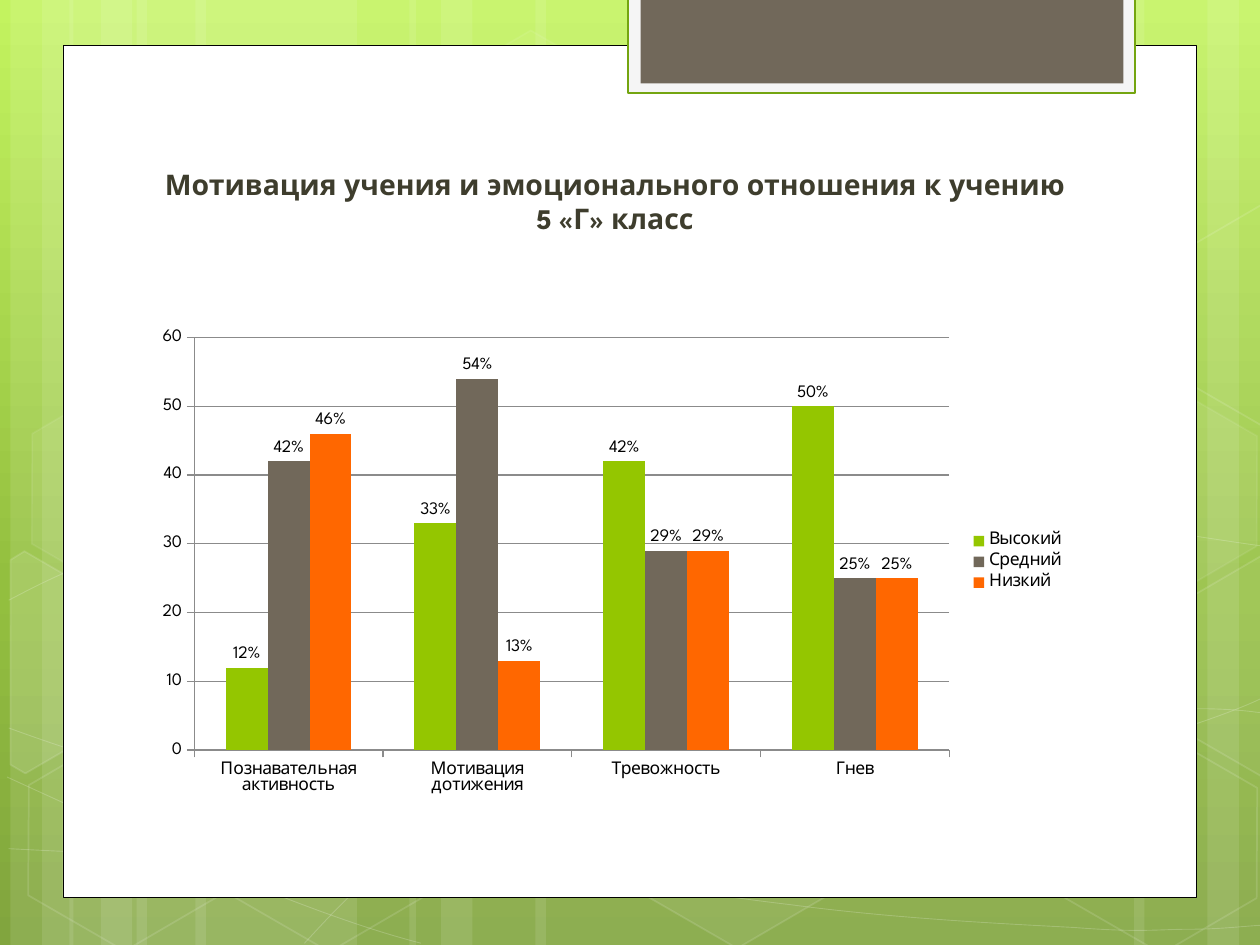
from copy import deepcopy
from math import cos, radians, sin

from lxml.etree import SubElement
from pptx import Presentation
from pptx.chart.data import CategoryChartData as ChartData
from pptx.dml.color import RGBColor
from pptx.enum.chart import XL_CHART_TYPE as CT, XL_LABEL_POSITION as LP
from pptx.enum.chart import XL_LEGEND_POSITION as LEGEND, XL_TICK_MARK as TICK
from pptx.enum.shapes import MSO_SHAPE as SHAPE
from pptx.enum.text import MSO_ANCHOR as ANCHOR, PP_ALIGN as ALIGN
from pptx.oxml.ns import qn
from pptx.util import Pt

WIDTH, HEIGHT = 720, 540
STRIPES = [(78, 126), (6, 36), (24, 60), (111.6, 126), (39.6, 36), (57.6, 60),
           (528, 126), (690, 36), (648, 60), (306, 222), (234, 36), (252, 60)]
CURVES = [
    [(5, 485), (44, 487, 83, 489, 137, 488), (191, 487.5, 258, 486, 330, 479),
     (402, 472, 504, 458, 570, 444), (636, 430.5, 703, 409, 725, 397)],
    [(5, 343), (26, 332, 47, 321, 87, 310), (128, 300, 186, 284, 250, 279),
     (314, 273.5, 392, 273, 471, 279), (550, 284, 682, 307, 725, 312.5)],
    [(4, 444), (91, 484, 178, 523, 240.5, 539)],
    [(5, 416), (27, 424, 50, 432, 92, 443.5), (134, 454, 197, 472, 257, 484.5),
     (317, 497, 392, 510, 452, 517), (512, 525, 576, 528, 614, 530),
     (652, 533, 662, 531, 680, 531), (699, 531, 712, 529, 725, 528.5)],
    [(174, 539), (187, 525, 200, 510.5, 217, 497.5), (235, 484.5, 259, 470, 279, 460),
     (299.5, 450, 312, 446, 338, 438.5), (364, 431, 413, 421, 438, 416),
     (464, 411, 467, 411, 490, 410), (512, 407.5, 547, 405, 572, 405),
     (597, 404, 638, 405, 638, 405), (686, 405),
     (699, 405, 711, 406, 718, 407), (724, 407.5, 722, 407, 724.5, 407.5)],
]
HEXAGONS = [(240.5, 26, 4, 8), (358, 424, 6, 12), (8, 425.5, 0, 12), (10, 224.6, 7, 8),
            (125, 426, 0, 12), (542, 326, 10, 12), (600.5, 427, 0, 12), (600.5, 226, 7, 8)]
LEFT_EDGE = [(6, 320), (14, 315), (69, 347), (68.5, 410.5), (14.5, 442), (6, 437)]
RIGHT_EDGE = [(667, 349), (721, 317.5), (726.5, 321), (726.5, 441), (721.5, 444), (667, 412.5)]
TILT = 30
CATEGORIES = ["Познавательная активность", "Мотивация дотижения", "Тревожность", "Гнев"]
SERIES = [("Высокий", (12, 33, 42, 50), "94C600"),
          ("Средний", (42, 54, 29, 25), "71685A"),
          ("Низкий", (46, 13, 29, 25), "FF6700")]


def rgb(color):
    return RGBColor.from_string(color)


def paint(fill, color=None, alpha=100):
    if not color or not alpha:
        fill.background()
        return
    fill.solid()
    fill.fore_color.rgb = rgb(color)
    if alpha < 100:
        clr = fill._xPr.find(".//" + qn("a:srgbClr"))
        SubElement(clr, qn("a:alpha")).set("val", str(alpha * 1000))


def write(tf, text, font, size, color, bold=False, align=ALIGN.LEFT):
    p = tf.paragraphs[0]
    p.alignment = align
    for i, line in enumerate(text.split("\n")):
        if i:
            p.add_line_break()
        r = p.add_run()
        r.text = line
        r.font.name, r.font.size, r.font.bold = font, Pt(size), bold
        r.font.color.rgb = rgb(color)


def rotate(x, y, degrees):
    c, s = cos(radians(degrees)), sin(radians(degrees))
    return x * c - y * s, x * s + y * c


def untilt(points):
    flat = [rotate(x, y, -TILT) for x, y in points]
    mx, my = ((min(axis) + max(axis)) / 2 for axis in zip(*flat))
    cx, cy = rotate(mx, my, TILT)
    return [(x + cx - mx, y + cy - my) for x, y in flat]


class Deck:
    font = "League Spartan"
    white, ink, title_ink, grey = "FFFFFF", "000000", "3E3D2D", "8B8B8B"

    def __init__(self):
        self.prs = Presentation()
        self.prs.slide_width, self.prs.slide_height = Pt(WIDTH), Pt(HEIGHT)
        self.s = self.prs.slides.add_slide(self.prs.slide_layouts[6])

    def background(self, stops):
        fill = self.s.background.fill
        fill.gradient()
        fill.gradient_angle = 270
        gs_list = next(self.s._element.iter(qn("a:gsLst")))
        gs_list.append(deepcopy(gs_list[-1]))
        for stop, (position, color) in zip(fill.gradient_stops, stops):
            stop.position, stop.color.rgb = position, rgb(color)

    def finish(self, sp, color, alpha, line, weight, line_alpha):
        sp.shadow.inherit = False
        paint(sp.fill, color, alpha)
        paint(sp.line.fill, line, line_alpha)
        if line:
            sp.line.width = Pt(weight)
        return sp

    def shape(self, kind, box, color=None, alpha=100, line=None, weight=1, line_alpha=100):
        sp = self.s.shapes.add_shape(kind, *map(Pt, box))
        return self.finish(sp, color, alpha, line, weight, line_alpha)

    def freeform(self, points, close):
        points = [(Pt(x), Pt(y)) for x, y in points]
        fb = self.s.shapes.build_freeform(*points[0])
        fb.add_line_segments(points[1:], close=close)
        return fb.convert_to_shape()

    def polygon(self, points, alpha=0):
        sp = self.freeform(untilt(points), True)
        sp.rotation = TILT
        self.finish(sp, self.white, alpha, self.white, 1, 12)

    def curve(self, segments):
        points = [seg[i:i + 2] for seg in segments for i in range(0, len(seg), 2)]
        sp = self.freeform(points, False)
        lines = iter(list(sp._element.iter(qn("a:lnTo"))))
        for seg in segments[1:]:
            first = next(lines)
            if len(seg) == 6:
                first.tag = qn("a:cubicBezTo")
                for extra in (next(lines), next(lines)):
                    first.append(extra[0])
                    extra.getparent().remove(extra)
        self.finish(sp, None, 0, self.white, 0.5, 20)

    def hexagon(self, x, y, alpha, line_alpha):
        sp = self.shape(SHAPE.HEXAGON, (x, y, 126, 109.4), self.white, alpha,
                        self.white, 1, line_alpha)
        sp.adjustments[0] = 0.285
        sp.rotation = TILT

    def title(self, text, box, bottom):
        tf = self.s.shapes.add_textbox(*map(Pt, box)).text_frame
        tf.word_wrap = True
        tf.vertical_anchor = ANCHOR.BOTTOM
        tf.margin_bottom = Pt(bottom)
        write(tf, text, font=self.font, size=16.2, color=self.title_ink, bold=True,
              align=ALIGN.CENTER)

    def chart(self, box, categories, series):
        data = ChartData()
        data.categories = categories
        for name, values, _ in series:
            data.add_series(name, values)
        chart = self.s.shapes.add_chart(CT.COLUMN_CLUSTERED, *map(Pt, box), data).chart
        chart.has_title = False
        chart.font.name, chart.font.size = self.font, Pt(10)
        chart.font.color.rgb = rgb(self.ink)
        chart.has_legend = True
        chart.legend.position = LEGEND.RIGHT
        chart.legend.include_in_layout = False
        plot = chart.plots[0]
        plot.vary_by_categories = False
        plot.gap_width, plot.overlap = 150, 0
        for ser, (_, _, color) in zip(plot.series, series):
            paint(ser.format.fill, color)
            labels = ser.data_labels
            labels.show_value = True
            labels.number_format, labels.number_format_is_linked = '0"%"', False
            labels.position = LP.OUTSIDE_END
        value = chart.value_axis
        value.minimum_scale, value.maximum_scale, value.major_unit = 0, 60, 10
        for axis in (value, chart.category_axis):
            axis.major_tick_mark = TICK.OUTSIDE
        for part in (value, chart.category_axis, value.major_gridlines):
            paint(part.format.line.fill, self.grey)
            part.format.line.width = Pt(0.75)


def main():
    deck = Deck()
    deck.background([(0, "C3F35F"), (0.62, "93BF3F"), (1, "81A53E")])
    for x, width in STRIPES:
        deck.shape(SHAPE.RECTANGLE, (x, 0, width, HEIGHT), deck.white, 10)
    for segments in CURVES:
        deck.curve(segments)
    for hexagon in HEXAGONS:
        deck.hexagon(*hexagon)
    deck.polygon(LEFT_EDGE, 10)
    deck.polygon(RIGHT_EDGE, 4)
    deck.polygon([(x, y - 200.5) for x, y in RIGHT_EDGE])
    deck.shape(SHAPE.RECTANGLE, (36, 26, 648, 487), deck.white, line=deck.ink, weight=0.5)
    deck.shape(SHAPE.RECTANGLE, (359, -1.4, 289.6, 54.7), "F5F5F5", line="74A510", weight=1.25)
    deck.shape(SHAPE.RECTANGLE, (366, -1.4, 276, 49), "71685A")
    deck.title("Мотивация учения и эмоционального отношения к учению\n5 «Г» класс",
               (82, 116.6, 538.6, 64), bottom=46)
    deck.chart((82.2, 182.8, 533.5, 276.5), CATEGORIES, SERIES)
    deck.prs.save("out.pptx")


if __name__ == "__main__":
    main()
